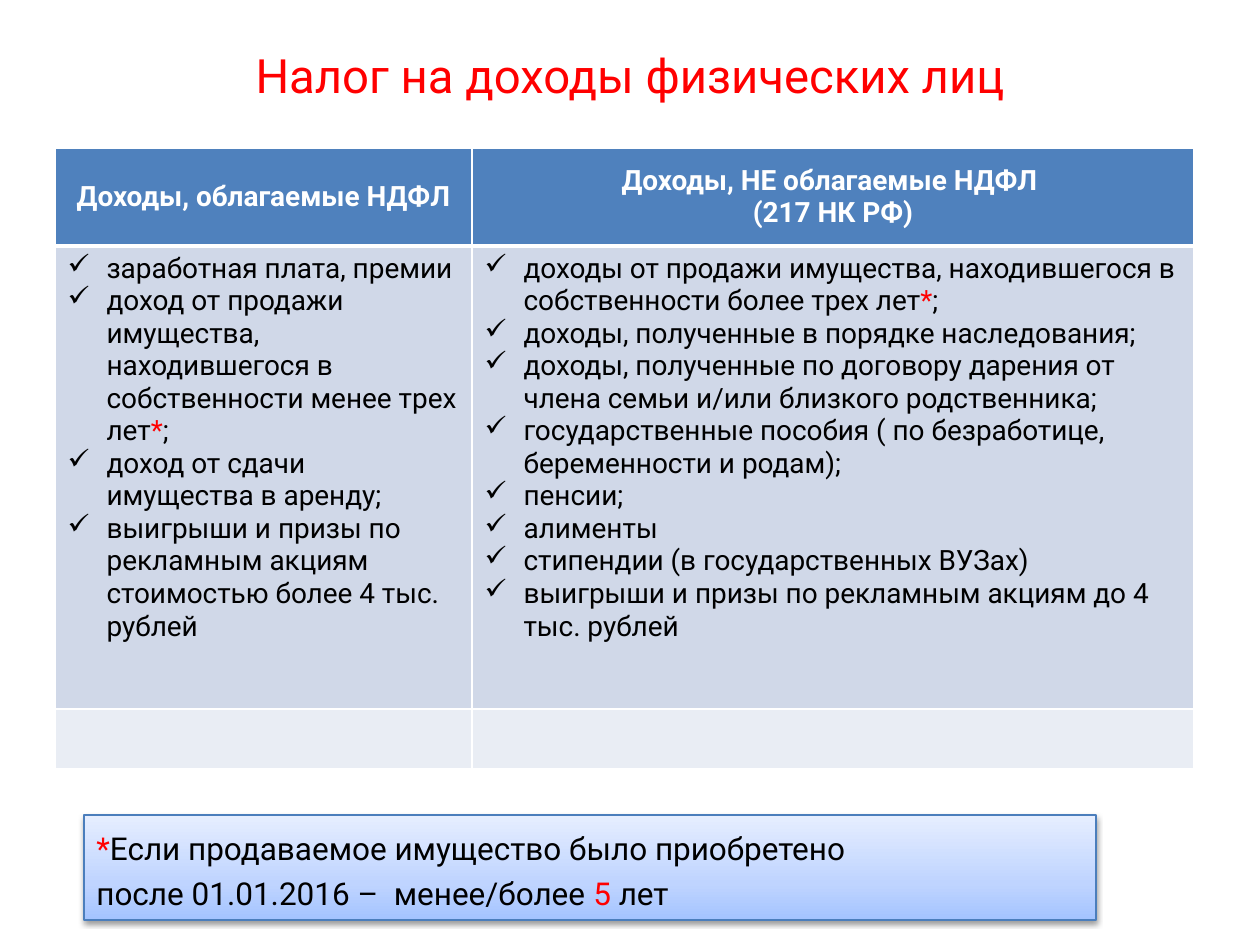
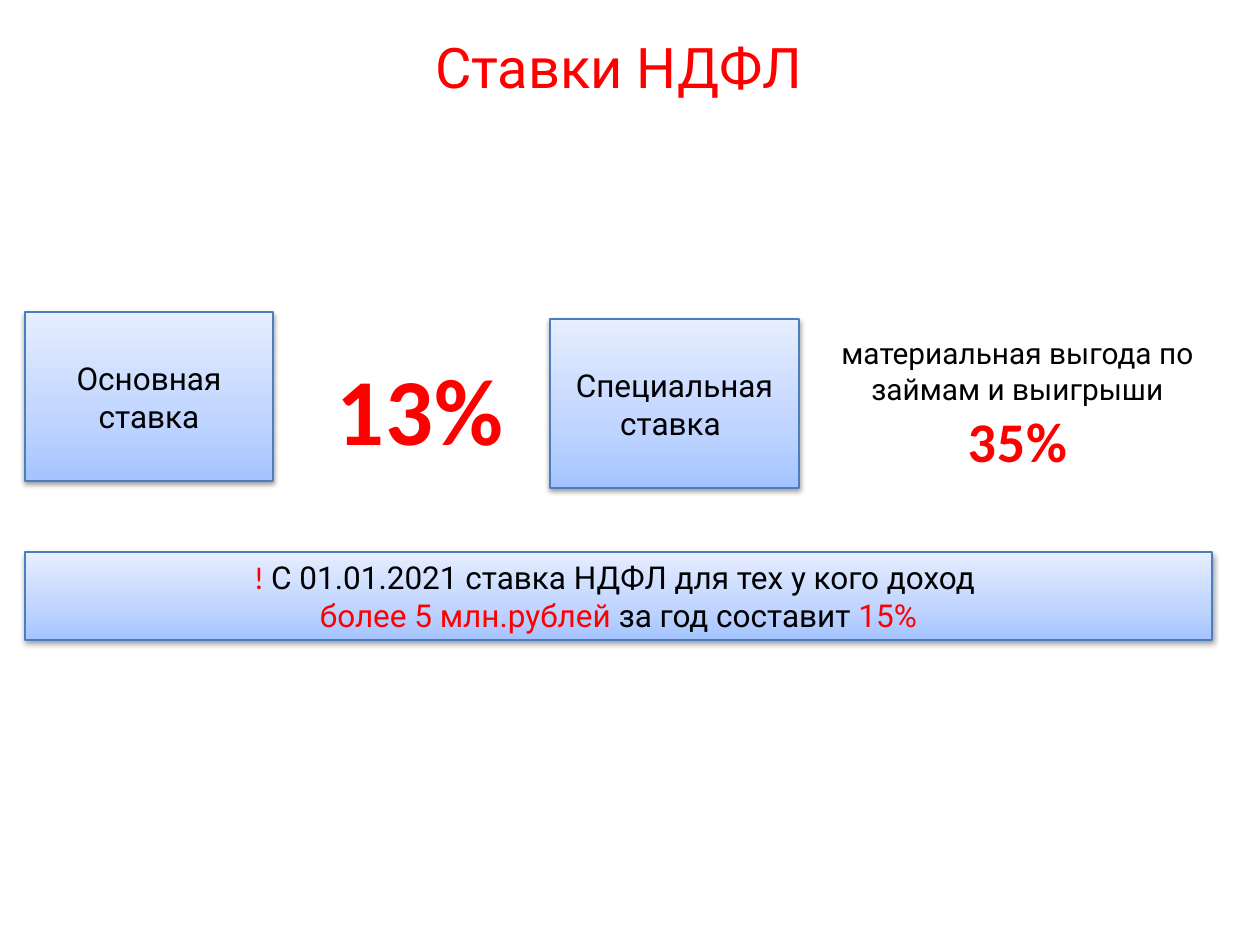
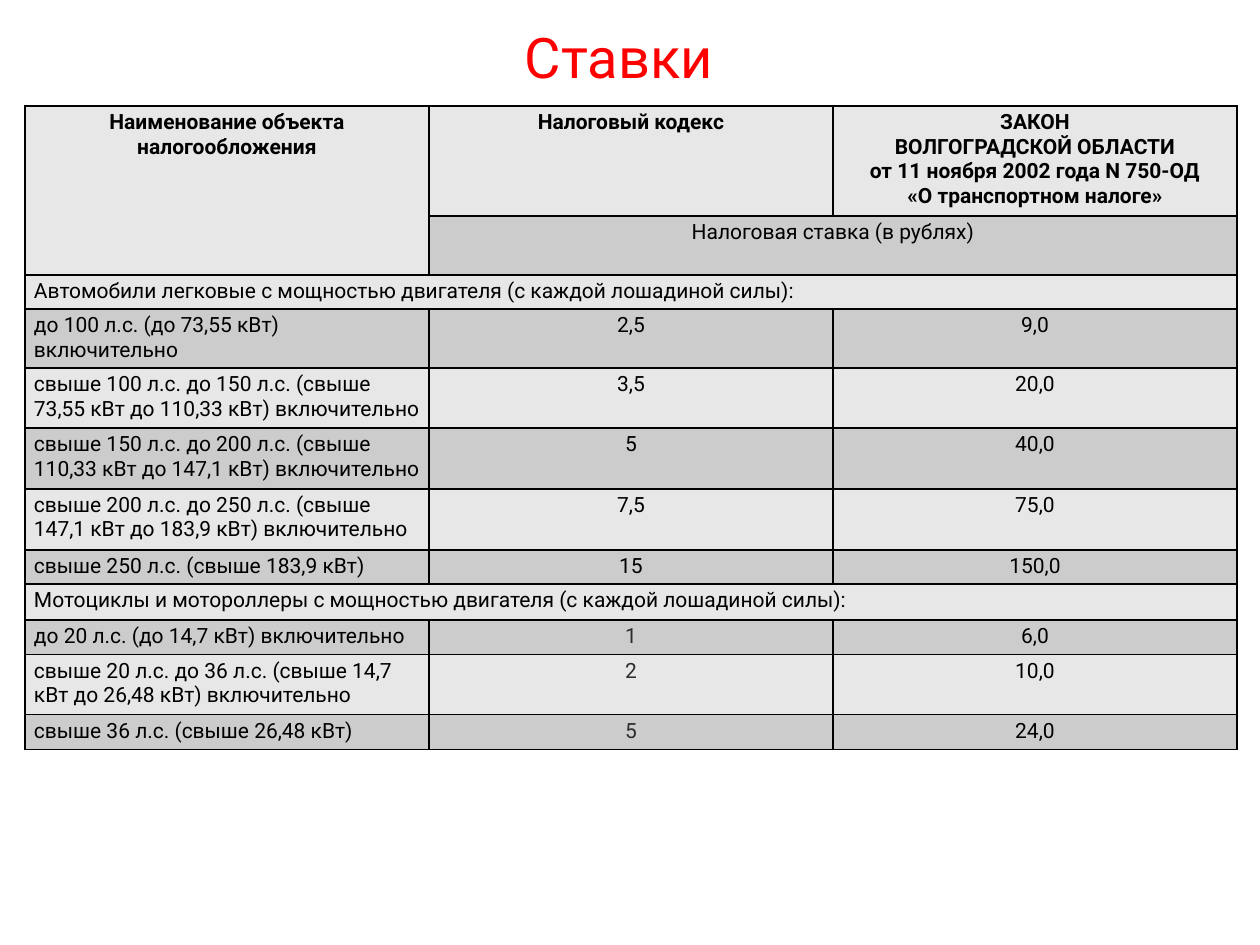
"""Build three slides on personal income tax and transport tax rates."""
import lxml.etree
import pptx
import pptx.dml.color
import pptx.enum.shapes
import pptx.enum.text
import pptx.oxml.ns
import pptx.util

PX = 914400 / 126
COLORS = {
    "red": "FF0000", "black": "000000", "white": "FFFFFF", "ink": "2D2D2D",
    "header": "4F81BD", "band": "D0D8E8", "pale": "E9EDF4", "edge": "4B7EBC",
    "light": "E7E7E7", "gray": "CCCCCC",
}
GRADIENT = {0: "A4C4FF", 35000: "BFD4FF", 100000: "E6EEFF"}
DRAWING = "http://schemas.openxmlformats.org/drawingml/2006/main"
qn = pptx.oxml.ns.qn
rgb = pptx.dml.color.RGBColor.from_string
Pt = pptx.util.Pt
LEFT, CENTER = pptx.enum.text.PP_ALIGN.LEFT, pptx.enum.text.PP_ALIGN.CENTER
TOP, MIDDLE = pptx.enum.text.MSO_ANCHOR.TOP, pptx.enum.text.MSO_ANCHOR.MIDDLE


def write(frame, text, size, align=CENTER, color="black", font="Roboto", bold=False):
    """Write one paragraph per line, with the pieces between bars in red."""
    frame.word_wrap = True
    for number, line in enumerate(text.split("\n")):
        para = frame.add_paragraph() if number else frame.paragraphs[0]
        para.alignment = align
        for index, piece in enumerate(line.split("|")):
            if piece:
                span = para.add_run()
                span.text = piece
                for key, value in {"name": font, "size": Pt(size), "bold": bold}.items():
                    setattr(span.font, key, value)
                span.font.color.rgb = rgb(COLORS["red" if index % 2 else color])


def add_panel(page, place, text, align=CENTER, anchor=MIDDLE):
    """Add a rectangle with the blue gradient and a soft shadow."""
    panel = page.shapes.add_shape(pptx.enum.shapes.MSO_SHAPE.RECTANGLE,
                                  *[round(length * PX) for length in place])
    panel.line.color.rgb = rgb(COLORS["edge"])
    panel.line.width = Pt(0.75)
    stops = "".join(f'<a:gs pos="{pos}"><a:srgbClr val="{color}"/></a:gs>'
                    for pos, color in GRADIENT.items())
    properties = panel._element.spPr
    properties.insert(2, lxml.etree.fromstring(
        f'<a:gradFill xmlns:a="{DRAWING}" rotWithShape="1"><a:gsLst>{stops}</a:gsLst>'
        '<a:lin ang="16200000" scaled="0"/></a:gradFill>'))
    properties.append(lxml.etree.fromstring(
        f'<a:effectLst xmlns:a="{DRAWING}"><a:outerShdw blurRad="40000" dist="20000" '
        'dir="5400000" rotWithShape="0"><a:srgbClr val="000000"><a:alpha val="38000"/>'
        '</a:srgbClr></a:outerShdw></a:effectLst>'))
    panel.text_frame.vertical_anchor = anchor
    write(panel.text_frame, text, 18, align)
    return panel


deck = pptx.Presentation()
deck.slide_width, deck.slide_height = round(1260 * PX), round(945 * PX)

titles = [
    ("Налог на доходы физических лиц", 27, (0, -4, 1260, 157), MIDDLE),
    ("Ставки НДФЛ", 32, (44, 26, 1150, 81), TOP),
    ("Ставки", 32, (44, 16, 1150, 81), TOP),
]
pages = []
for text, size, place, anchor in titles:
    page = deck.slides.add_slide(deck.slide_layouts[5])
    title = page.shapes.title
    title.left, title.top, title.width, title.height = [round(length * PX) for length in place]
    title.text_frame.auto_size = pptx.enum.text.MSO_AUTO_SIZE.NONE
    title.text_frame.vertical_anchor = anchor
    write(title.text_frame, text, size, color="red")
    pages.append(page)
income_page, rates_page, transport_page = pages

grids = [
    (income_page, (55, 148), [417, 722], [98, 463, 60]),
    (transport_page, (25, 106), [404] * 3,
     [110, 59, 34, 59, 60, 61, 61, 34, 36, 35, 60, 35]),
]
tables = []
for page, (left, top), widths, heights in grids:
    place = [round(length * PX) for length in (left, top, sum(widths), sum(heights))]
    table = page.shapes.add_table(len(heights), len(widths), *place).table
    table.horz_banding = False
    for column, width in zip(table.columns, widths):
        column.width = round(width * PX)
    for row, height in zip(table.rows, heights):
        row.height = round(height * PX)
    tables.append(table)
income_table, transport_table = tables

incomes = [
    ("Доходы, облагаемые НДФЛ",
     "заработная плата, премии\n"
     "доход от продажи имущества, находившегося в собственности менее трех лет|*|;\n"
     "доход от сдачи имущества в аренду;\n"
     "выигрыши и призы по рекламным акциям стоимостью более 4 тыс. рублей"),
    ("Доходы, НЕ облагаемые НДФЛ \n(217 НК РФ)",
     "доходы от продажи имущества, находившегося в собственности более трех лет|*|;\n"
     "доходы, полученные в порядке наследования;\n"
     "доходы, полученные по договору дарения от члена семьи и/или близкого родственника;\n"
     "государственные пособия ( по безработице, беременности и родам);\n"
     "пенсии;\n"
     "алименты\n"
     "стипендии (в государственных ВУЗах)\n"
     "выигрыши и призы по рекламным акциям до 4 тыс. рублей"),
]
for column, (heading, items) in enumerate(incomes):
    header, body = income_table.cell(0, column), income_table.cell(1, column)
    header.vertical_anchor = MIDDLE
    write(header.text_frame, heading, 16, color="white", bold=True)
    write(body.text_frame, items, 16, LEFT)
    for para in body.text_frame.paragraphs:
        properties = para._p.get_or_add_pPr()
        properties.set("marL", str(round(39 * PX)))
        properties.set("indent", str(round(-39 * PX)))
        lxml.etree.SubElement(properties, qn("a:buChar")).set("char", "✓")

note = add_panel(income_page, (84, 815, 1012, 105),
                 "|*|Если продаваемое имущество было приобретено\n"
                 "после 01.01.2016 –  менее/более |5| лет", LEFT, TOP)
for para in note.text_frame.paragraphs:
    para.line_spacing = 1.2

add_panel(rates_page, (25, 312, 248, 169), "Основная ставка")
add_panel(rates_page, (550, 319, 249, 169), "Специальная ставка ")
notice = add_panel(rates_page, (25, 552, 1187, 88),
                   "|! |С 01.01.2021 ставка НДФЛ для тех у кого доход \n"
                   "|более 5 млн.рублей| за год составит |15%|")
notice.text_frame.paragraphs[0].runs[0].font.name = "Calibri"

rates = [
    ((323, 345, 194, 127), "|13%|", 54),
    ((809, 329, 417, 152), "материальная выгода по займам и выигрыши\n|35%|", 17),
]
for place, text, size in rates:
    box = rates_page.shapes.add_textbox(*[round(length * PX) for length in place])
    write(box.text_frame, text, size)
    percent = box.text_frame.paragraphs[-1].runs[0]
    for key, value in {"name": "Calibri", "size": Pt(max(size, 32)), "bold": True}.items():
        setattr(percent.font, key, value)
    percent._r.get_or_add_rPr().set("spc", "50")

transport_rows = [
    ("Наименование объекта налогообложения", "Налоговый кодекс",
     "ЗАКОН\nВОЛГОГРАДСКОЙ ОБЛАСТИ\nот 11 ноября 2002 года N 750-ОД\n«О транспортном налоге»"),
    ("", "Налоговая ставка (в рублях)", ""),
    ("Автомобили легковые с мощностью двигателя (с каждой лошадиной силы):",),
    ("до 100 л.с. (до 73,55 кВт) включительно", "2,5", "9,0"),
    ("свыше 100 л.с. до 150 л.с. (свыше 73,55 кВт до 110,33 кВт) включительно", "3,5", "20,0"),
    ("свыше 150 л.с. до 200 л.с. (свыше 110,33 кВт до 147,1 кВт) включительно", "5", "40,0"),
    ("свыше 200 л.с. до 250 л.с. (свыше 147,1 кВт до 183,9 кВт) включительно", "7,5", "75,0"),
    ("свыше 250 л.с. (свыше 183,9 кВт)", "15", "150,0"),
    ("Мотоциклы и мотороллеры с мощностью двигателя (с каждой лошадиной силы):",),
    ("до 20 л.с. (до 14,7 кВт) включительно", "1", "6,0"),
    ("свыше 20 л.с. до 36 л.с. (свыше 14,7 кВт до 26,48 кВт) включительно", "2", "10,0"),
    ("свыше 36 л.с. (свыше 26,48 кВт)", "5", "24,0"),
]
transport_table.cell(0, 0).merge(transport_table.cell(1, 0))
transport_table.cell(1, 1).merge(transport_table.cell(1, 2))
for row, texts in enumerate(transport_rows):
    if len(texts) == 1:
        transport_table.cell(row, 0).merge(transport_table.cell(row, 2))
    for column, text in enumerate(texts):
        cell = transport_table.cell(row, column)
        cell.margin_left = cell.margin_right = round(9 * PX)
        cell.margin_top = cell.margin_bottom = round(4 * PX)
        if text:
            write(cell.text_frame, text, 12,
                  align=CENTER if column or row == 0 else LEFT,
                  color="ink" if column == 1 and row > 8 else "black",
                  bold=row == 0)

looks = [
    (income_table, ["header", "band", "pale"], "white"),
    (transport_table, ["light", "gray"], "black"),
]
for table, fills, edge in looks:
    for row in range(len(table.rows)):
        for column in range(len(table.columns)):
            cell = table.cell(row, column)
            cell.fill.solid()
            cell.fill.fore_color.rgb = rgb(COLORS[fills[row % len(fills)]])
            for index, side in enumerate("LRTB"):
                thick = table is income_table and (row, side) in [(0, "B"), (1, "T")]
                cell._tc.get_or_add_tcPr().insert(index, lxml.etree.fromstring(
                    f'<a:ln{side} xmlns:a="{DRAWING}" w="{Pt(3 if thick else 1)}"><a:solidFill>'
                    f'<a:srgbClr val="{COLORS[edge]}"/></a:solidFill></a:ln{side}>'))

deck.save("out.pptx")
